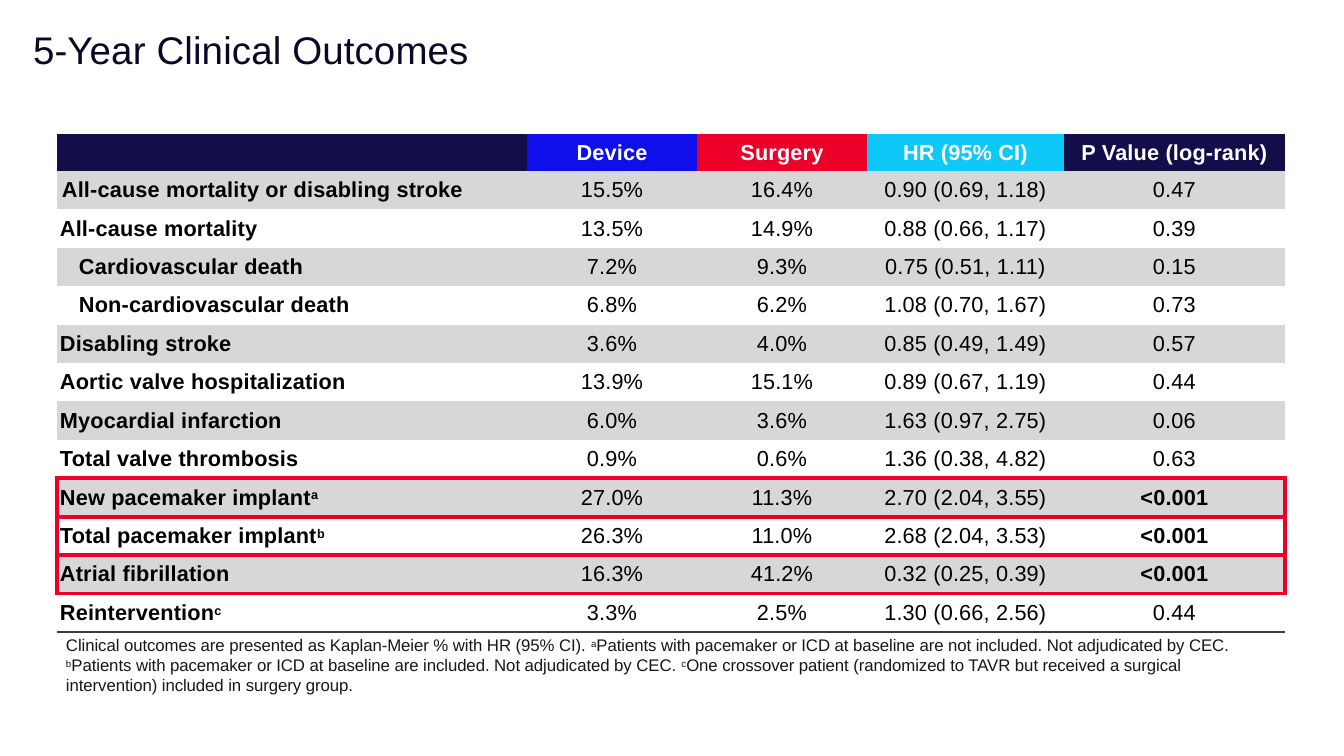
import pptx
import pptx.dml.color
import pptx.enum.text
import pptx.oxml
import pptx.oxml.ns
import pptx.util

EMU_PER_PX = 914400 / 100.8
FONT = "Arial"
NAVY, BLUE, RED, CYAN = "130E4A", "0F0FEB", "EC002A", "0EC8F7"
GREY, BLACK, WHITE, CHARCOAL = "D7D7D7", "000000", "FFFFFF", "3B3B3B"
NO_STYLE_NO_GRID = "{2D5ABB26-0587-4C30-8999-92F81FD0307C}"
CENTER = pptx.enum.text.PP_ALIGN.CENTER

TITLE = "5-Year Clinical Outcomes"
# Text between ^ marks is superscript.
FOOTNOTE = (
    "Clinical outcomes are presented as Kaplan-Meier % with HR (95% CI). "
    "^a^Patients with pacemaker or ICD at baseline are not included. "
    "Not adjudicated by CEC. "
    "^b^Patients with pacemaker or ICD at baseline are included. "
    "Not adjudicated by CEC. "
    "^c^One crossover patient (randomized to TAVR but received a surgical "
    "intervention) included in surgery group."
)
HEADERS = [("", NAVY), ("Device", BLUE), ("Surgery", RED),
           ("HR (95% CI)", CYAN), ("P Value (log-rank)", NAVY)]
OUTCOMES = [
    ("All-cause mortality or disabling stroke", "15.5%", "16.4%", "0.90 (0.69, 1.18)", "0.47"),
    ("All-cause mortality", "13.5%", "14.9%", "0.88 (0.66, 1.17)", "0.39"),
    ("Cardiovascular death", "7.2%", "9.3%", "0.75 (0.51, 1.11)", "0.15"),
    ("Non-cardiovascular death", "6.8%", "6.2%", "1.08 (0.70, 1.67)", "0.73"),
    ("Disabling stroke", "3.6%", "4.0%", "0.85 (0.49, 1.49)", "0.57"),
    ("Aortic valve hospitalization", "13.9%", "15.1%", "0.89 (0.67, 1.19)", "0.44"),
    ("Myocardial infarction", "6.0%", "3.6%", "1.63 (0.97, 2.75)", "0.06"),
    ("Total valve thrombosis", "0.9%", "0.6%", "1.36 (0.38, 4.82)", "0.63"),
    ("New pacemaker implant^a^", "27.0%", "11.3%", "2.70 (2.04, 3.55)", "<0.001"),
    ("Total pacemaker implant^b^", "26.3%", "11.0%", "2.68 (2.04, 3.53)", "<0.001"),
    ("Atrial fibrillation", "16.3%", "41.2%", "0.32 (0.25, 0.39)", "<0.001"),
    ("Reintervention^c^", "3.3%", "2.5%", "1.30 (0.66, 2.56)", "0.44"),
]
COLUMN_WIDTHS = [470, 170, 170, 197, 221]
HEADER_HEIGHT, BODY_HEIGHT = 37, 461
LABEL_INDENTS = {1: 5, 3: 22, 4: 22}
HIGHLIGHTED_ROWS = (9, 10, 11)
RED_LINES_BELOW = (8, 9, 11)


def px(length):
    return pptx.util.Emu(round(length * EMU_PER_PX))


def color(hex_string):
    return pptx.dml.color.RGBColor.from_string(hex_string)


def write(paragraph, text, size, hex_string, bold=False, spacing=0):
    """Fill a paragraph, raising the parts between ^ marks; spacing is in 1/100 pt."""
    paragraph.font.name = FONT
    paragraph.font.size = pptx.util.Pt(size)
    paragraph.font.bold = bold
    paragraph.font.color.rgb = color(hex_string)
    for position, part in enumerate(text.split("^")):
        if not part:
            continue
        run = paragraph.add_run()
        run.text = part
        properties = run.font._element
        if spacing:
            properties.set("spc", str(spacing))
        if position % 2:
            properties.set("baseline", "24000")


def add_text(slide, left, top, width, height, text, size, hex_string,
             spacing=0, line_spacing=None):
    box = slide.shapes.add_textbox(px(left), px(top), px(width), px(height))
    frame = box.text_frame
    frame.word_wrap = True
    frame.margin_left = frame.margin_right = frame.margin_bottom = 0
    frame.margin_top = px(2)
    paragraph = frame.paragraphs[0]
    if line_spacing:
        paragraph.line_spacing = pptx.util.Pt(line_spacing)
    write(paragraph, text, size, hex_string, spacing=spacing)


def add_border(cell, side, hex_string, points):
    """Draw one side (L, R, T, B); call in that order and before the fill."""
    namespace = pptx.oxml.ns.nsdecls("a")
    cell._tc.get_or_add_tcPr().append(pptx.oxml.parse_xml(
        f'<a:ln{side} {namespace} w="{pptx.util.Pt(points)}"><a:solidFill>'
        f'<a:srgbClr val="{hex_string}"/></a:solidFill></a:ln{side}>'))


def add_cell_borders(cell, row, column):
    if row in HIGHLIGHTED_ROWS and column == 0:
        add_border(cell, "L", RED, 3)
    if row in HIGHLIGHTED_ROWS and column == len(HEADERS) - 1:
        add_border(cell, "R", RED, 3)
    if row - 1 in RED_LINES_BELOW:
        add_border(cell, "T", RED, 3)
    if row in RED_LINES_BELOW:
        add_border(cell, "B", RED, 3)
    elif row == len(OUTCOMES):
        add_border(cell, "B", CHARCOAL, 1)


def fill_cell(cell, text, fill, text_color, bold):
    cell.margin_left = cell.margin_right = cell.margin_top = cell.margin_bottom = 0
    cell.vertical_anchor = pptx.enum.text.MSO_ANCHOR.MIDDLE
    cell.fill.solid()
    cell.fill.fore_color.rgb = color(fill)
    write(cell.text_frame.paragraphs[0], text, 15.5, text_color, bold, spacing=15)


def add_outcomes_table(slide, left, top):
    frame = slide.shapes.add_table(
        len(OUTCOMES) + 1, len(HEADERS), px(left), px(top),
        px(sum(COLUMN_WIDTHS)), px(HEADER_HEIGHT + BODY_HEIGHT))
    table = frame.table
    table.first_row = table.horz_banding = False
    style = table._tbl.tblPr.find(pptx.oxml.ns.qn("a:tableStyleId"))
    style.text = NO_STYLE_NO_GRID
    for column, width in zip(table.columns, COLUMN_WIDTHS):
        column.width = px(width)
    for row in table.rows:
        row.height = px(BODY_HEIGHT / len(OUTCOMES))
    table.rows[0].height = px(HEADER_HEIGHT)

    for column, (header, fill) in enumerate(HEADERS):
        cell = table.cell(0, column)
        fill_cell(cell, header, fill, WHITE, True)
        cell.text_frame.paragraphs[0].alignment = CENTER
    for row, outcome in enumerate(OUTCOMES, start=1):
        for column, text in enumerate(outcome):
            cell = table.cell(row, column)
            add_cell_borders(cell, row, column)
            bold = column == 0 or text.startswith("<")
            fill_cell(cell, text, GREY if row % 2 else WHITE, BLACK, bold)
            if column == 0:
                cell.margin_left = px(LABEL_INDENTS.get(row, 3))
            else:
                cell.text_frame.paragraphs[0].alignment = CENTER


def main():
    presentation = pptx.Presentation()
    presentation.slide_width = px(1344)
    presentation.slide_height = px(756)
    slide = presentation.slides.add_slide(presentation.slide_layouts[6])
    add_text(slide, 66, 633, 1174, 62, FOOTNOTE, 12, "171717",
             spacing=-5, line_spacing=14.3)
    add_outcomes_table(slide, 57, 134)
    add_text(slide, 33, 24, 445, 49, TITLE, 27.5, "090825", spacing=10)
    presentation.save("out.pptx")


if __name__ == "__main__":
    main()
